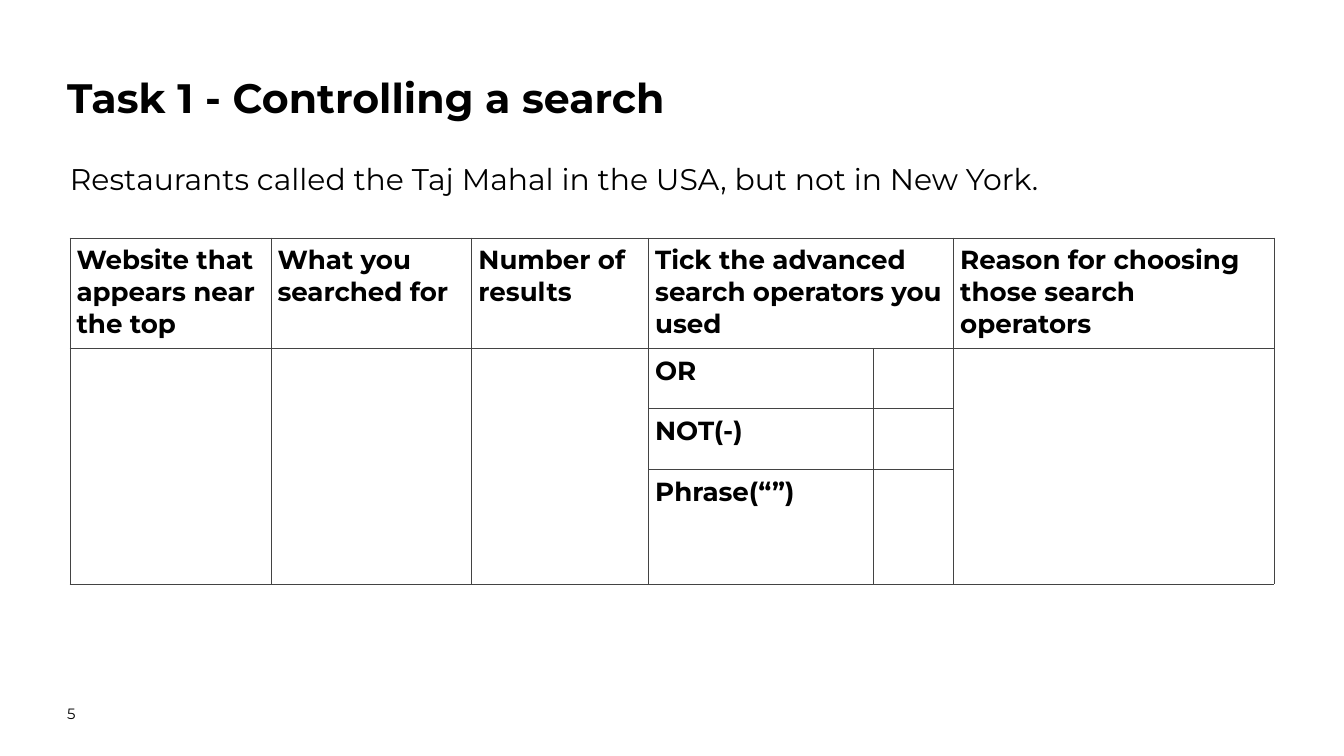
from lxml.etree import SubElement
from pptx import Presentation
from pptx.dml.color import RGBColor
from pptx.oxml.ns import qn
from pptx.util import Pt

FONT = "Montserrat"
BLACK = "000000"
BORDER = "434343"
BORDER_WIDTH = 0.75
CELL_MARGIN = 7.2

TEXTS = [
    ("Task 1 - Controlling a search", (72, 69.84, 1292.4, 128), 44, True, 1.15),
    ("Restaurants called the Taj Mahal in the USA, but not in New York.",
     (74.88, 160.56, 1292.4, 154.8), 32, False, 1.3),
    ("5", (72, 754.56, 113, 28), 16, False, 1.0),
]

TABLE_LEFT, TABLE_TOP = 74.88, 254.88
COLUMN_WIDTHS = [215.28, 215.28, 189.36, 240.48, 86.4, 343.44]
ROW_HEIGHTS = [118.08, 64.8, 64.8, 123]
ROWS = [
    ["Website that appears near the top", "What you searched for", "Number of results",
     "Tick the advanced search operators you used", "",
     "Reason for choosing those search operators"],
    ["", "", "", "OR", "", ""],
    ["", "", "", "NOT(-)", "", ""],
    ["", "", "", "Phrase(“”)", "", ""],
]
MERGES = [((0, 3), (0, 4))] + [((1, column), (3, column)) for column in (0, 1, 2, 5)]


def color(value):
    return RGBColor.from_string(value)


def add_run(paragraph, text, size, bold):
    run = paragraph.add_run()
    run.text = text
    run.font.name = FONT
    run.font.size = Pt(size)
    run.font.bold = bold
    run.font.color.rgb = color(BLACK)


def set_margins(target, margin):
    target.margin_left = target.margin_right = Pt(margin)
    target.margin_top = target.margin_bottom = Pt(margin)


def add_text(slide, text, box, size, bold, spacing):
    frame = slide.shapes.add_textbox(*map(Pt, box)).text_frame
    frame.word_wrap = True
    set_margins(frame, 0)
    paragraph = frame.paragraphs[0]
    paragraph.line_spacing = spacing
    add_run(paragraph, text, size, bold)


def style_cell(cell):
    set_margins(cell, CELL_MARGIN)
    properties = cell._tc.get_or_add_tcPr()
    for side in ("a:lnL", "a:lnR", "a:lnT", "a:lnB"):
        line = SubElement(properties, qn(side), w=str(Pt(BORDER_WIDTH)))
        fill = SubElement(line, qn("a:solidFill"))
        SubElement(fill, qn("a:srgbClr"), val=BORDER)
    cell.fill.background()


def add_search_table(slide):
    table = slide.shapes.add_table(
        len(ROWS), len(COLUMN_WIDTHS), Pt(TABLE_LEFT), Pt(TABLE_TOP),
        Pt(sum(COLUMN_WIDTHS)), Pt(sum(ROW_HEIGHTS))).table
    table.first_row = table.horz_banding = False
    for column, width in zip(table.columns, COLUMN_WIDTHS):
        column.width = Pt(width)
    for row, height, texts in zip(table.rows, ROW_HEIGHTS, ROWS):
        row.height = Pt(height)
        for cell, text in zip(row.cells, texts):
            style_cell(cell)
            if text:
                add_run(cell.text_frame.paragraphs[0], text, 28, True)
    for first, last in MERGES:
        table.cell(*first).merge(table.cell(*last))


def main():
    """Build the search task slide."""
    presentation = Presentation()
    presentation.slide_width, presentation.slide_height = Pt(1440), Pt(810)
    slide = presentation.slides.add_slide(presentation.slide_layouts[6])
    for text in TEXTS:
        add_text(slide, *text)
    add_search_table(slide)
    presentation.save("out.pptx")


if __name__ == "__main__":
    main()
